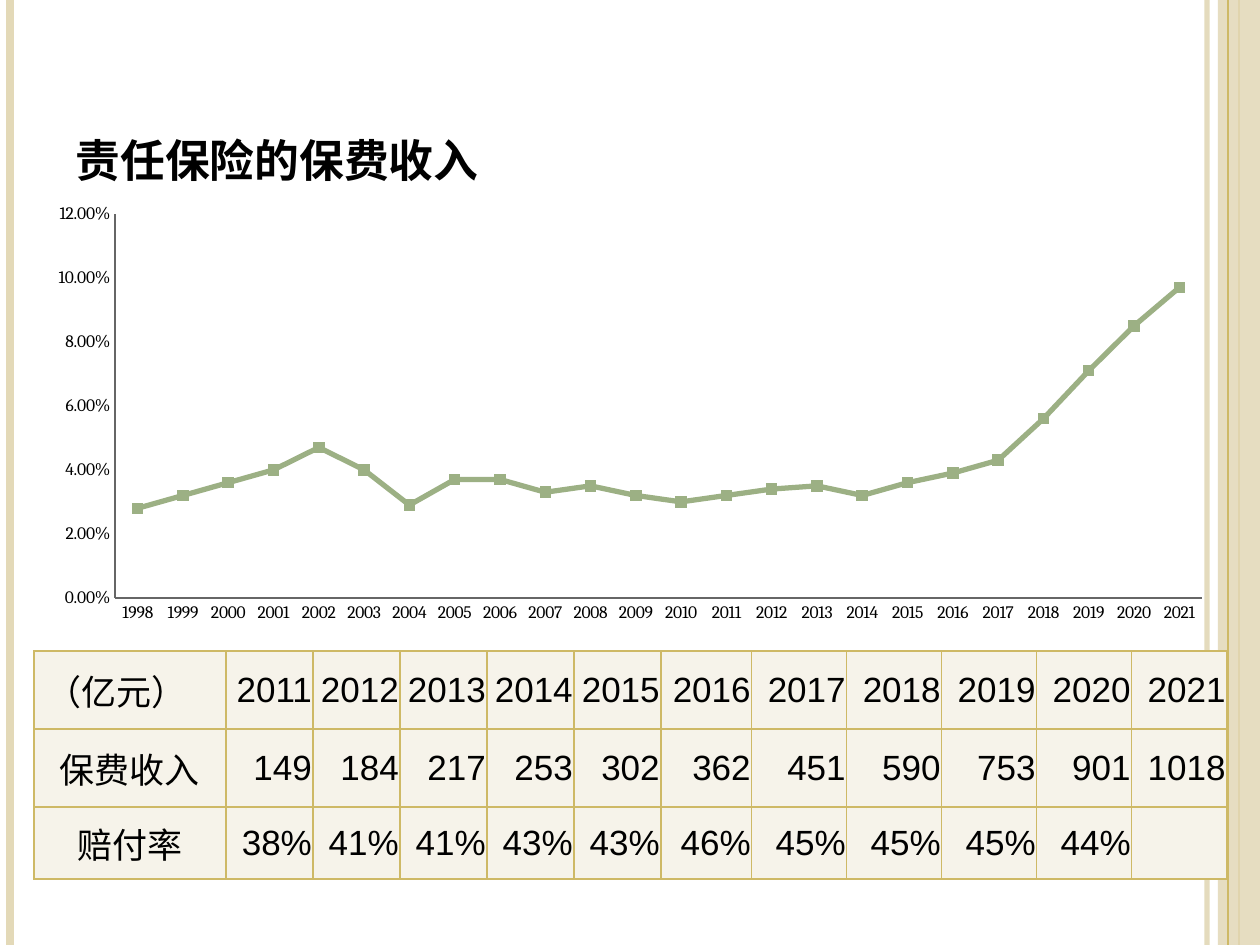
from dataclasses import dataclass
from lxml import etree
from pptx import Presentation, util as u
from pptx.chart.data import CategoryChartData
from pptx.dml.color import RGBColor
from pptx.enum import chart as ch, shapes, text
from pptx.oxml.ns import qn


@dataclass
class Theme:
    sand: str = "E3D9B8"
    gold: str = "CEB966"
    cell: str = "F6F3EA"
    series: str = "9CB084"
    axis: str = "666666"
    ink: str = "000000"
    title_pt: int = 32
    table_pt: int = 20
    chart_pt: int = 10


THEME = Theme()

# Content
TITLE = "责任保险的保费收入"
FIRST_YEAR = 1998
SHARES = [0.028, 0.032, 0.036, 0.04, 0.047, 0.04, 0.029, 0.037, 0.037, 0.033, 0.035, 0.032,
          0.03, 0.032, 0.034, 0.035, 0.032, 0.036, 0.039, 0.043, 0.056, 0.071, 0.085, 0.097]
PREMIUMS = [
    ["（亿元）"] + [str(year) for year in range(2011, 2022)],
    ["保费收入", "149", "184", "217", "253", "302", "362", "451", "590", "753", "901", "1018"],
    ["赔付率", "38%", "41%", "41%", "43%", "43%", "46%", "45%", "45%", "45%", "44%", ""],
]

# Places in px: left, top, width, height
PAGE_W, PAGE_H = 1260, 945
TITLE_BOX = (63, 38, 1029, 157)
CHART_BOX = (35, 195, 1191, 436)
PLOT_BOX = (115, 214, 1087, 384)
TABLE_AT = (34, 651)
COL_W = [192] + [87] * 5 + [91] + [95] * 5
ROW_H = [78, 78, 72]
BAND_BOX = (1218, 0, 42, PAGE_H)
# Vertical rules: x, colour, points, opacity in percent
RULES_BEHIND = [(1207, THEME.sand, 3, 93), (10, THEME.sand, 4.5, 100), (1239, THEME.gold, 1.5, 100)]
RULES_ABOVE = [(1228, THEME.gold, 0.75, 100)]


def px(n):
    return u.Emu(round(n * 914400 / 126))


def rgb(colour):
    return RGBColor.from_string(colour)


def paint(fill, colour, opacity=100):
    fill.solid()
    fill.fore_color.rgb = rgb(colour)
    if opacity < 100:
        for clr in fill._xPr.iter(qn("a:srgbClr")):
            etree.SubElement(clr, qn("a:alpha"), val=str(opacity * 1000))


def style_font(font, name, size, bold=None):
    font.name, font.size, font.bold = name, u.Pt(size), bold
    font.color.rgb = rgb(THEME.ink)


def add_rules(slide, rules):
    for x, colour, points, opacity in rules:
        rule = slide.shapes.add_connector(shapes.MSO_CONNECTOR.STRAIGHT, px(x), 0, px(x), px(PAGE_H))
        rule.line.width = u.Pt(points)
        paint(rule.line.fill, colour, opacity)
        etree.SubElement(rule._element.spPr, qn("a:effectLst"))


def add_frame(slide):
    add_rules(slide, RULES_BEHIND)
    band = slide.shapes.add_shape(shapes.MSO_SHAPE.RECTANGLE, *map(px, BAND_BOX))
    band.shadow.inherit = False
    band.line.fill.background()
    paint(band.fill, THEME.sand, 87)
    add_rules(slide, RULES_ABOVE)


def set_title(slide):
    title = slide.shapes.title
    title.left, title.top, title.width, title.height = map(px, TITLE_BOX)
    frame = title.text_frame
    frame.text = TITLE
    frame.vertical_anchor = text.MSO_ANCHOR.BOTTOM
    heading = frame.paragraphs[0]
    heading.alignment = text.PP_ALIGN.LEFT
    style_font(heading.font, "Times New Roman", THEME.title_pt, True)
    heading.runs[0].font.bold = True
    heading.runs[0]._r.get_or_add_rPr().set("cap", "small")


def border_cell(cell):
    props = cell._tc.get_or_add_tcPr()
    for i, side in enumerate(("a:lnL", "a:lnR", "a:lnT", "a:lnB")):
        edge = etree.Element(qn(side), w=str(u.Pt(1)))
        fill = etree.SubElement(edge, qn("a:solidFill"))
        etree.SubElement(fill, qn("a:srgbClr"), val=THEME.gold)
        props.insert(i, edge)


def add_premiums(slide):
    sizes = map(px, (*TABLE_AT, sum(COL_W), sum(ROW_H)))
    table = slide.shapes.add_table(len(ROW_H), len(COL_W), *sizes).table
    for column, width in zip(table.columns, COL_W):
        column.width = px(width)
    for row, height in zip(table.rows, ROW_H):
        row.height = px(height)
    for r, values in enumerate(PREMIUMS):
        for c, value in enumerate(values):
            cell = table.cell(r, c)
            cell.text = value
            cell.vertical_anchor = text.MSO_ANCHOR.MIDDLE
            paint(cell.fill, THEME.cell)
            border_cell(cell)
            entry = cell.text_frame.paragraphs[0]
            style_font(entry.font, "Arial", THEME.table_pt)
            if c:
                entry.alignment = text.PP_ALIGN.RIGHT
                cell.margin_left = cell.margin_right = cell.margin_top = px(1)
                cell.margin_bottom = 0
            elif r:
                entry.alignment = text.PP_ALIGN.CENTER
            else:
                entry.alignment = text.PP_ALIGN.LEFT
                entry.space_before = u.Pt(4)


def place_plot(chart):
    left, top, width, height = CHART_BOX
    x, y, w, h = PLOT_BOX
    area = chart._chartSpace.chart.plotArea
    for old in area.findall(qn("c:layout")):
        area.remove(old)
    layout = etree.Element(qn("c:layout"))
    area.insert(0, layout)
    manual = etree.SubElement(layout, qn("c:manualLayout"))
    for tag, value in [("layoutTarget", "inner"), ("xMode", "edge"), ("yMode", "edge"),
                       ("x", (x - left) / width), ("y", (y - top) / height),
                       ("w", w / width), ("h", h / height)]:
        etree.SubElement(manual, qn("c:" + tag), val=str(value))


def add_share_chart(slide):
    data = CategoryChartData(number_format="0.00%")
    data.categories = [str(FIRST_YEAR + i) for i in range(len(SHARES))]
    data.add_series("Series 1", SHARES)
    chart = slide.shapes.add_chart(ch.XL_CHART_TYPE.LINE_MARKERS, *map(px, CHART_BOX), data).chart
    chart.has_legend = chart.has_title = False
    style_font(chart.font, "Cambria", THEME.chart_pt)
    place_plot(chart)

    for axis in (chart.category_axis, chart.value_axis):
        axis.has_major_gridlines = False
        axis.major_tick_mark = axis.minor_tick_mark = ch.XL_TICK_MARK.NONE
        axis.format.line.width = u.Pt(1)
        paint(axis.format.line.fill, THEME.axis)
    shares = chart.value_axis
    shares.minimum_scale, shares.maximum_scale, shares.major_unit = 0, 0.12, 0.02
    shares.tick_labels.number_format = "0.00%"
    shares.tick_labels.number_format_is_linked = False

    plot = chart.plots[0]
    plot.vary_by_categories = False
    trend = plot.series[0]
    trend.smooth = False
    trend.format.line.width = u.Pt(3)
    paint(trend.format.line.fill, THEME.series)
    trend.marker.style, trend.marker.size = ch.XL_MARKER_STYLE.SQUARE, 6
    paint(trend.marker.format.fill, THEME.series)
    paint(trend.marker.format.line.fill, THEME.series)


def main():
    deck = Presentation()
    deck.slide_width, deck.slide_height = px(PAGE_W), px(PAGE_H)
    slide = deck.slides.add_slide(deck.slide_layouts[5])
    add_frame(slide)
    set_title(slide)
    add_premiums(slide)
    add_share_chart(slide)
    deck.save("out.pptx")


if __name__ == "__main__":
    main()
